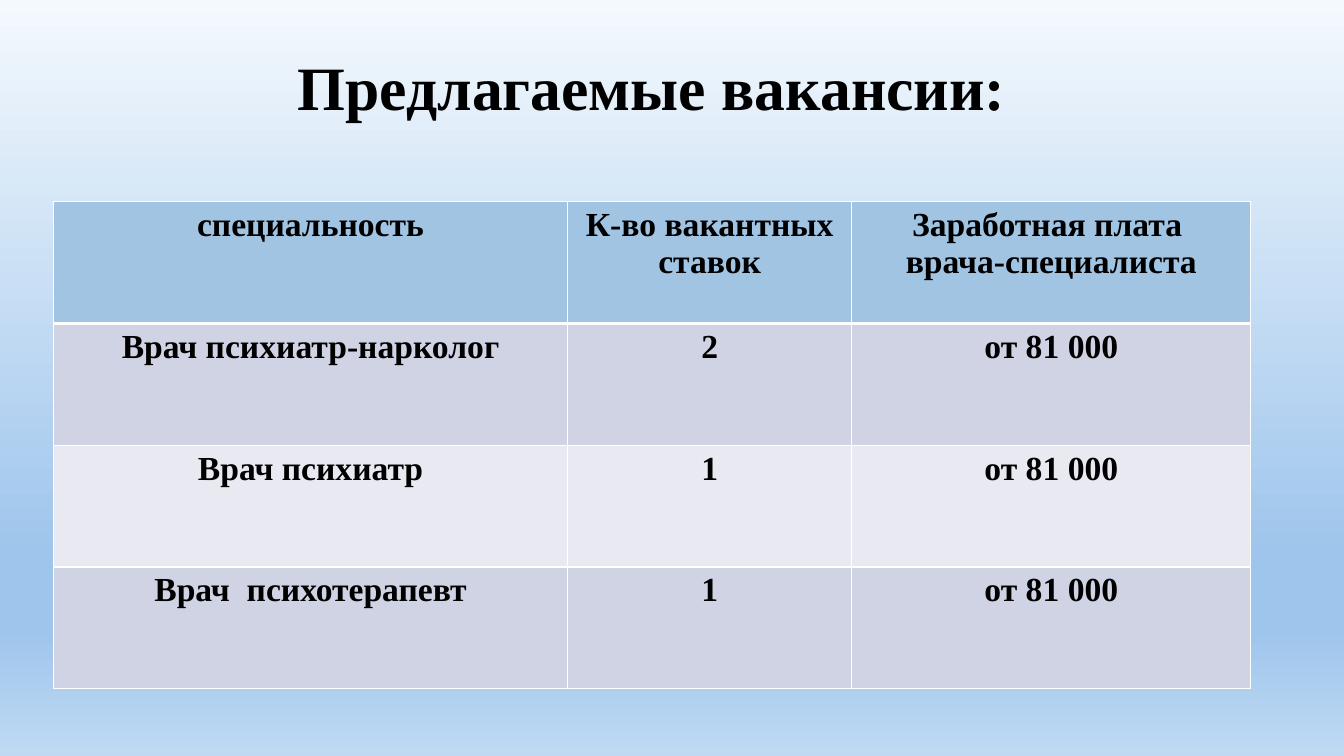
from lxml import etree
from pptx import Presentation
from pptx.dml.color import RGBColor
from pptx.enum.text import MSO_ANCHOR, PP_ALIGN
from pptx.oxml.ns import qn
from pptx.util import Pt

BLACK = RGBColor(0x00, 0x00, 0x00)
WHITE = RGBColor(0xFF, 0xFF, 0xFF)
HEADER_BLUE = RGBColor(0xA1, 0xC4, 0xE3)
BAND_DARK = RGBColor(0xD0, 0xD3, 0xE3)
BAND_LIGHT = RGBColor(0xE9, 0xEA, 0xF1)
SKY_TOP = RGBColor(0xF4, 0xF9, 0xFD)
SKY_DEEP = RGBColor(0x9E, 0xC5, 0xEC)
SKY_BOTTOM = RGBColor(0xBF, 0xD9, 0xF3)

SKY_STOPS = [(0, SKY_TOP), (74, SKY_DEEP), (83, SKY_DEEP), (100, SKY_BOTTOM)]
COL_WIDTHS = [367.2, 203, 285.1]
ROW_HEIGHT = 87
ROW_FILLS = [HEADER_BLUE, BAND_DARK, BAND_LIGHT, BAND_DARK]
VACANCIES = [
    [["специальность"], ["К-во вакантных", "ставок"],
     ["Заработная плата ", "врача-специалиста"]],
    [["Врач психиатр-нарколог"], ["2"], ["от 81 000"]],
    [["Врач психиатр"], ["1"], ["от 81 000"]],
    [["Врач  психотерапевт"], ["1"], ["от 81 000"]],
]


def write_lines(tf, lines, size):
    for i, line in enumerate(lines):
        p = tf.add_paragraph() if i else tf.paragraphs[0]
        p.alignment = PP_ALIGN.CENTER
        r = p.add_run()
        r.text = line
        r.font.name = "Times New Roman"
        r.font.size = Pt(size)
        r.font.bold = True
        r.font.color.rgb = BLACK


def add_border(cell, side, width):
    tc_pr = cell._tc.get_or_add_tcPr()
    ln = etree.SubElement(tc_pr, qn(f"a:ln{side}"), w=str(Pt(width)))
    solid = etree.SubElement(ln, qn("a:solidFill"))
    etree.SubElement(solid, qn("a:srgbClr"), val=str(WHITE))


prs = Presentation()
prs.slide_width = Pt(960)
prs.slide_height = Pt(540)
s = prs.slides.add_slide(prs.slide_layouts[6])

fill = s.background.fill
fill.gradient()
fill.gradient_angle = 270
stops = s.element.find(".//" + qn("a:gsLst"))
for gs in list(stops):
    stops.remove(gs)
for percent, color in SKY_STOPS:
    gs = etree.SubElement(stops, qn("a:gs"), pos=str(percent * 1000))
    etree.SubElement(gs, qn("a:srgbClr"), val=str(color))

title = s.shapes.add_textbox(Pt(51.8), Pt(12.2), Pt(828), Pt(104.4))
tf = title.text_frame
tf.word_wrap = True
tf.vertical_anchor = MSO_ANCHOR.MIDDLE
write_lines(tf, ["Предлагаемые вакансии:"], 44)
tf.paragraphs[0].line_spacing = 0.9

table = s.shapes.add_table(len(VACANCIES), len(COL_WIDTHS), Pt(38.2), Pt(144),
                           Pt(sum(COL_WIDTHS)), Pt(ROW_HEIGHT * len(VACANCIES))).table
for col, width in zip(table.columns, COL_WIDTHS):
    col.width = Pt(width)

for i, (row, color) in enumerate(zip(VACANCIES, ROW_FILLS)):
    table.rows[i].height = Pt(ROW_HEIGHT)
    for j, lines in enumerate(row):
        cell = table.cell(i, j)
        write_lines(cell.text_frame, lines, 24)
        add_border(cell, "L", 1)
        add_border(cell, "R", 1)
        add_border(cell, "T", 3 if i == 1 else 1)
        add_border(cell, "B", 3 if i == 0 else 1)
        cell.fill.solid()
        cell.fill.fore_color.rgb = color

prs.save("out.pptx")
